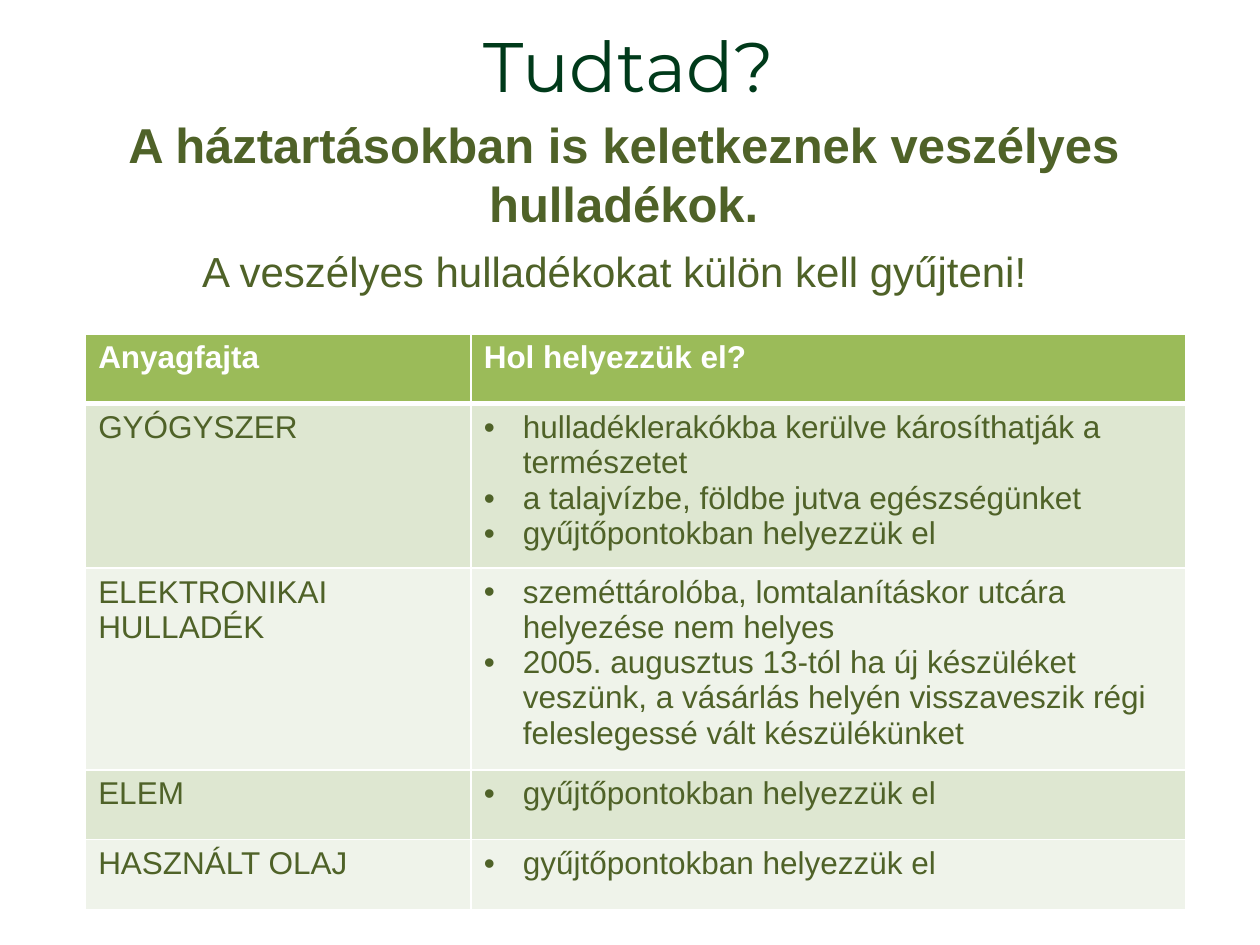
from lxml import etree
from pptx import Presentation
from pptx.dml.color import RGBColor
from pptx.enum.text import PP_ALIGN
from pptx.oxml.ns import qn
from pptx.util import Inches, Pt

CENTER = PP_ALIGN.CENTER
COLORS = {
    "title": "003A1A",
    "text": "4F6228",
    "white": "FFFFFF",
    "header": "9BBB59",
    "odd": "DEE7D1",
    "even": "EFF3EA",
}
BULLET_INDENT = Inches(0.31)


def add_run(paragraph, text, size, color, bold=False, font="Arial"):
    run = paragraph.add_run()
    run.text = text
    run.font.name = font
    run.font.size = Pt(size)
    run.font.bold = bold
    run.font.color.rgb = RGBColor.from_string(COLORS[color])


def add_border(cell, side, points):
    """Draw a white line on one side of the cell: L, R, T or B."""
    line = etree.SubElement(cell._tc.get_or_add_tcPr(), qn(f"a:ln{side}"), w=str(Pt(points)))
    fill = etree.SubElement(line, qn("a:solidFill"))
    etree.SubElement(fill, qn("a:srgbClr"), val=COLORS["white"])


presentation = Presentation()
presentation.slide_width = Inches(10)
presentation.slide_height = Inches(7.5)
slide = presentation.slides.add_slide(presentation.slide_layouts[6])

# One percent of the slide's width and height
column = presentation.slide_width / 100
row = presentation.slide_height / 100

# Headings: left, top, width, height in percent, then the text and its look
headings = [
    (4.9, 1.73, 90, 16.67, "Tudtad?", 40, "title", False, "Montserrat"),
    (4.9, 11.47, 89.2, 13.87, "A háztartásokban is keletkeznek veszélyes hulladékok.",
     28, "text", True, "Arial"),
    (6.5, 25.33, 84.5, 6.67, "A veszélyes hulladékokat külön kell gyűjteni!",
     24, "text", False, "Arial"),
]
for left, top, width, height, text, size, color, bold, font in headings:
    box = slide.shapes.add_textbox(
        int(left * column), int(top * row), int(width * column), int(height * row))
    box.text_frame.word_wrap = True
    paragraph = box.text_frame.paragraphs[0]
    paragraph.alignment = CENTER
    add_run(paragraph, text, size, color, bold, font)

# Table of waste types and where they go
waste_rows = [
    ("Anyagfajta", ["Hol helyezzük el?"]),
    ("GYÓGYSZER", [
        "hulladéklerakókba kerülve károsíthatják a természetet",
        "a talajvízbe, földbe jutva egészségünket",
        "gyűjtőpontokban helyezzük el",
    ]),
    ("ELEKTRONIKAI HULLADÉK", [
        "szeméttárolóba, lomtalanításkor utcára helyezése nem helyes",
        "2005. augusztus 13-tól ha új készüléket veszünk, a vásárlás helyén "
        "visszaveszik régi feleslegessé vált készülékünket",
    ]),
    ("ELEM", ["gyűjtőpontokban helyezzük el"]),
    ("HASZNÁLT OLAJ", ["gyűjtőpontokban helyezzük el"]),
]
column_widths = [30.6, 56.7]
row_heights = [7.4, 17.4, 21.33, 7.4, 7.4]

table = slide.shapes.add_table(
    len(row_heights), len(column_widths), int(6.8 * column), int(35.33 * row),
    int(sum(column_widths) * column), int(sum(row_heights) * row)).table
for table_column, width in zip(table.columns, column_widths):
    table_column.width = int(width * column)

for row_index, (waste, places) in enumerate(waste_rows):
    table.rows[row_index].height = int(row_heights[row_index] * row)
    is_header = row_index == 0
    fill_color = "header" if is_header else "odd" if row_index % 2 else "even"
    for column_index, lines in enumerate([[waste], places]):
        cell = table.cell(row_index, column_index)
        add_border(cell, "L", 1)
        add_border(cell, "R", 1)
        add_border(cell, "T", 3 if row_index == 1 else 1)
        add_border(cell, "B", 3 if is_header else 1)
        cell.fill.solid()
        cell.fill.fore_color.rgb = RGBColor.from_string(COLORS[fill_color])
        for line_index, line in enumerate(lines):
            frame = cell.text_frame
            paragraph = frame.add_paragraph() if line_index else frame.paragraphs[0]
            if column_index == 1 and not is_header:
                properties = paragraph._p.get_or_add_pPr()
                properties.set("marL", str(BULLET_INDENT))
                properties.set("indent", str(-BULLET_INDENT))
                etree.SubElement(properties, qn("a:buFont"), typeface="Arial")
                etree.SubElement(properties, qn("a:buChar"), char="•")
            add_run(paragraph, line, 18, "white" if is_header else "text", is_header)

presentation.save("out.pptx")
